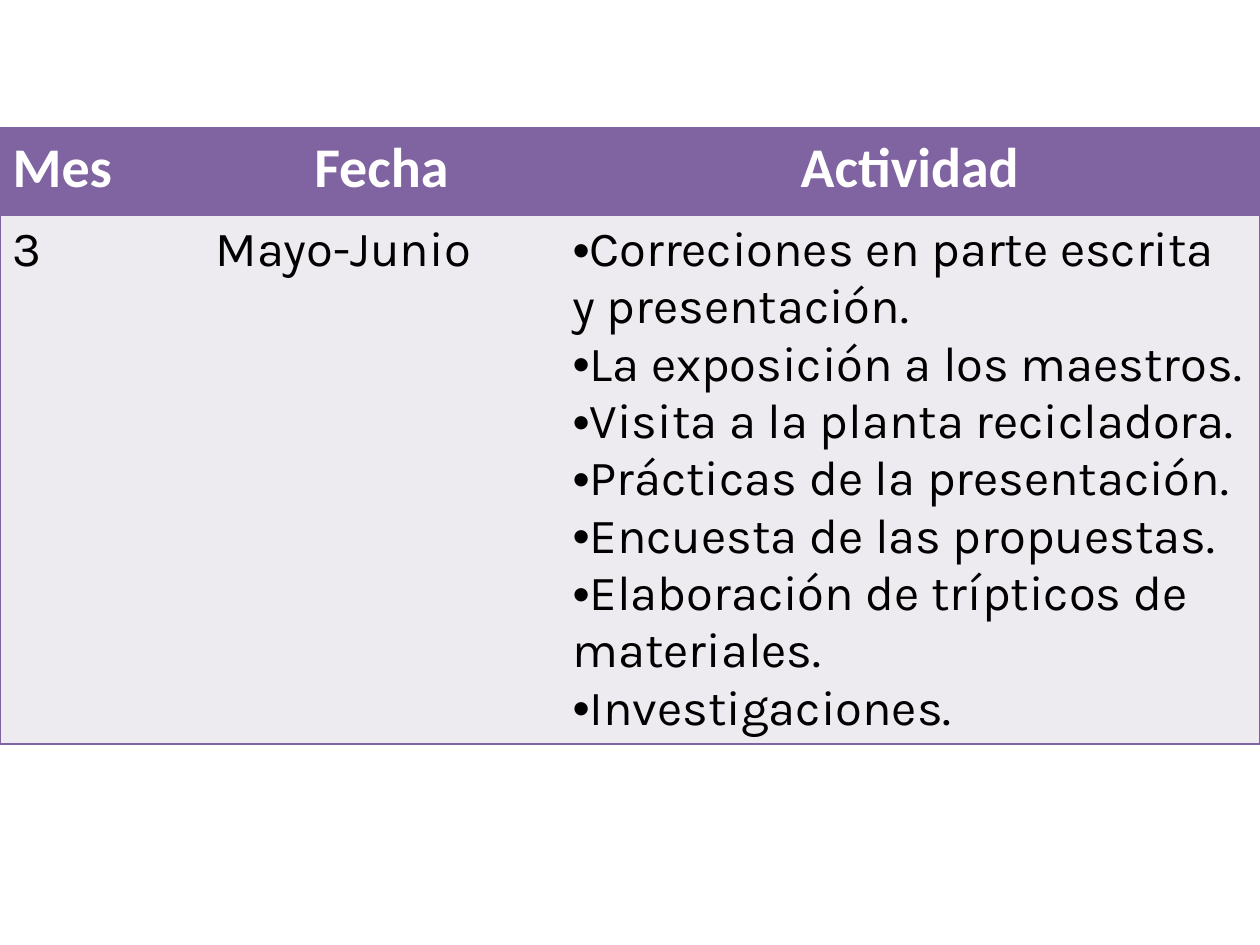
from lxml import etree
from pptx import Presentation
from pptx.dml.color import RGBColor
from pptx.enum.text import PP_ALIGN
from pptx.oxml.ns import qn
from pptx.util import Pt

LEFT, CENTER = PP_ALIGN.LEFT, PP_ALIGN.CENTER
BLANK_LAYOUT = 6
PURPLE, LAVENDER, WHITE, BLACK = "8064A2", "EDEAF0", "FFFFFF", "000000"

COLUMN_WIDTHS = [116, 204, 400]
ROW_HEIGHTS = [50, 302]
HEADERS = ["Mes", "Fecha", "Actividad"]
ACTIVITIES = [
    "Correciones en parte escrita y presentación.",
    "La exposición a los maestros.",
    "Visita a la planta recicladora.",
    "Prácticas de la presentación.",
    "Encuesta de las propuestas.",
    "Elaboración de trípticos de materiales.",
    "Investigaciones.",
]


def write_text(text_frame, lines, font, size, color, bold=False, align=LEFT, bullet=None):
    for index, line in enumerate(lines):
        paragraph = text_frame.paragraphs[0] if index == 0 else text_frame.add_paragraph()
        paragraph.alignment = align
        if bullet:
            properties = paragraph._p.get_or_add_pPr()
            etree.SubElement(properties, qn("a:buFont"), typeface="Arial")
            etree.SubElement(properties, qn("a:buChar"), char=bullet)
        run = paragraph.add_run()
        run.text = line
        run.font.name = font
        run.font.size = Pt(size)
        run.font.bold = bold
        run.font.color.rgb = RGBColor.from_string(color)


def style_cell(cell, fill, edges):
    """Fill the cell and draw 1 pt lines on the given edges (L, R, T, B) only."""
    cell.fill.solid()
    cell.fill.fore_color.rgb = RGBColor.from_string(fill)
    properties = cell._tc.get_or_add_tcPr()
    for position, edge in enumerate("LRTB"):
        line = etree.Element(qn(f"a:ln{edge}"), w=str(Pt(1)))
        if edge in edges:
            solid_fill = etree.SubElement(line, qn("a:solidFill"))
            etree.SubElement(solid_fill, qn("a:srgbClr"), val=PURPLE)
        else:
            etree.SubElement(line, qn("a:noFill"))
        properties.insert(position, line)


presentation = Presentation()
presentation.slide_width, presentation.slide_height = Pt(720), Pt(540)
slide = presentation.slides.add_slide(presentation.slide_layouts[BLANK_LAYOUT])

table = slide.shapes.add_table(
    len(ROW_HEIGHTS), len(COLUMN_WIDTHS),
    Pt(0), Pt(73), Pt(sum(COLUMN_WIDTHS)), Pt(sum(ROW_HEIGHTS)),
).table
table.horz_banding = False
for column, width in zip(table.columns, COLUMN_WIDTHS):
    column.width = Pt(width)
for row, height in zip(table.rows, ROW_HEIGHTS):
    row.height = Pt(height)

for row_index, fill in enumerate([PURPLE, LAVENDER]):
    for column_index, side in enumerate(["L", "", "R"]):
        style_cell(table.cell(row_index, column_index), fill, "TB" + side)

for column_index, (header, align) in enumerate(zip(HEADERS, [LEFT, CENTER, CENTER])):
    write_text(table.cell(0, column_index).text_frame, [header],
               font="Calibri", size=32, color=WHITE, bold=True, align=align)

body = [(["3"], None), (["Mayo-Junio"], None), (ACTIVITIES, "•")]
for column_index, (lines, bullet) in enumerate(body):
    write_text(table.cell(1, column_index).text_frame, lines,
               font="Karla", size=28, color=BLACK, bullet=bullet)

presentation.save("out.pptx")
